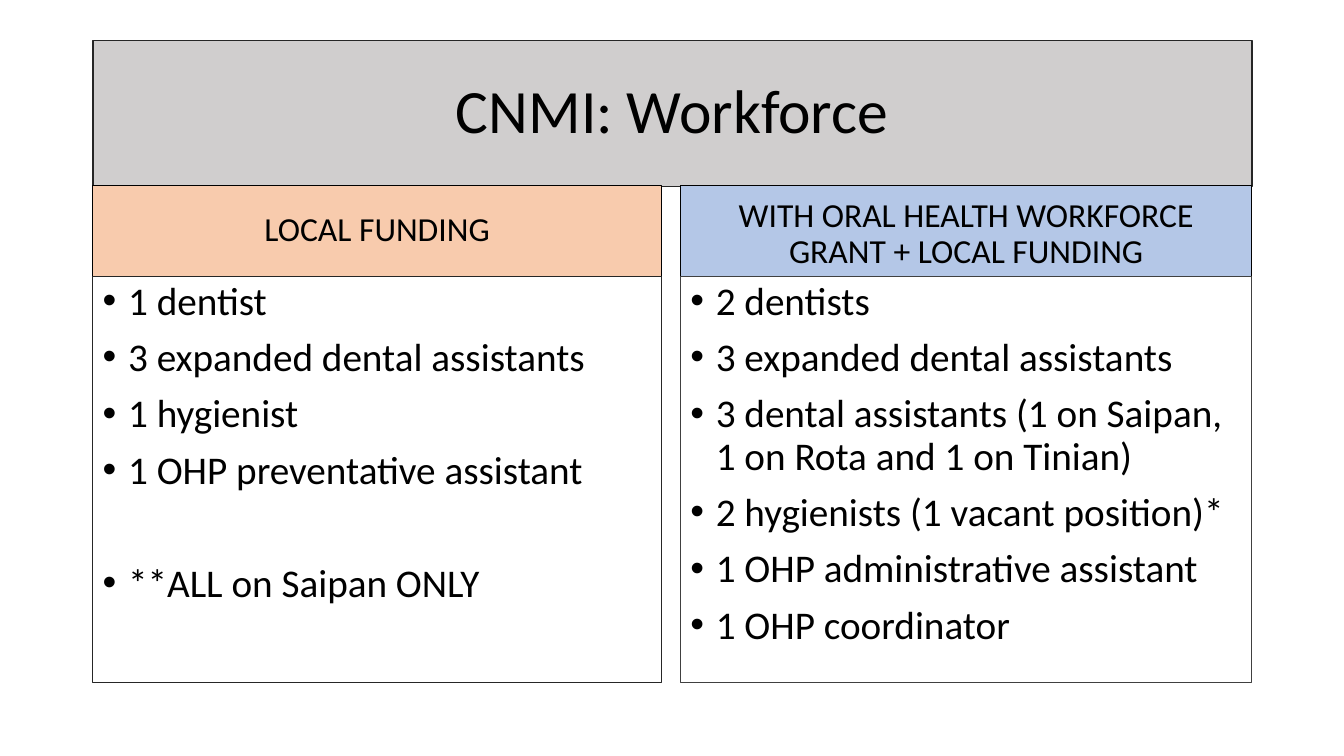
from dataclasses import dataclass

from lxml.etree import SubElement
from pptx import Presentation
from pptx.dml.color import RGBColor
from pptx.enum.shapes import MSO_SHAPE as Shape
from pptx.enum.text import MSO_ANCHOR as Anchor, PP_ALIGN as Align
from pptx.oxml.ns import qn
from pptx.util import Cm, Pt

# Content
TITLE = "CNMI: Workforce"
FUNDING_COLUMNS = [
    {
        "heading": "LOCAL FUNDING",
        "anchor": Anchor.MIDDLE,
        "fill": "F8CBAD",
        "border": "262626",
        "staff": ["1 dentist", "3 expanded dental assistants", "1 hygienist",
                  "1 OHP preventative assistant"],
        "footnote": "**ALL on Saipan ONLY",
    },
    {
        "heading": "WITH ORAL HEALTH WORKFORCE GRANT + LOCAL FUNDING",
        "anchor": Anchor.BOTTOM,
        "fill": "B4C7E7",
        "border": "404040",
        "staff": ["2 dentists", "3 expanded dental assistants",
                  "3 dental assistants (1 on Saipan, 1 on Rota and 1 on Tinian)",
                  "2 hygienists (1 vacant position)*",
                  "1 OHP administrative assistant", "1 OHP coordinator"],
        "footnote": None,
    },
]


@dataclass(frozen=True)
class Theme:
    font: str = "Calibri"
    text: str = "000000"
    title_fill: str = "D0CECE"
    title_border: str = "262626"
    heading_border: str = "000000"
    title_size: int = 44
    heading_size: int = 24
    staff_size: int = 28
    line_spacing: float = 0.9
    space_before: int = 10
    footnote_space: float = 50.5


THEME = Theme()

# Layout in centimetres
SLIDE_WIDTH, SLIDE_HEIGHT = 33.87, 19.05
LEFT, WIDTH = 2.34, 29.21
TITLE_TOP, TITLE_HEIGHT = 1.02, 3.68
HEADING_TOP, HEADING_HEIGHT = 4.68, 2.28
STAFF_TOP, STAFF_HEIGHT = HEADING_TOP + HEADING_HEIGHT, 10.24
LOCAL_WIDTH, GUTTER = 14.33, 0.48
GRANT_LEFT = LEFT + LOCAL_WIDTH + GUTTER
COLUMN_SPANS = [(LEFT, LOCAL_WIDTH), (GRANT_LEFT, LEFT + WIDTH - GRANT_LEFT)]
BULLET_INDENT = Cm(0.64)


def add_panel(slide, box, lines, size, fill, border, border_width=0.75,
              anchor=Anchor.MIDDLE, align=Align.CENTER):
    panel = slide.shapes.add_shape(Shape.RECTANGLE, *(Cm(side) for side in box))
    panel.shadow.inherit = False
    if fill:
        panel.fill.solid()
        panel.fill.fore_color.rgb = RGBColor.from_string(fill)
    else:
        panel.fill.background()
    panel.line.color.rgb = RGBColor.from_string(border)
    panel.line.width = Pt(border_width)

    frame = panel.text_frame
    frame.word_wrap = True
    frame.vertical_anchor = anchor
    frame.text = "\n".join(lines)
    for paragraph in frame.paragraphs:
        paragraph.alignment = align
        paragraph.line_spacing = THEME.line_spacing
        paragraph.space_before = Pt(THEME.space_before)
        for run in paragraph.runs:
            run.font.name = THEME.font
            run.font.size = Pt(size)
            run.font.color.rgb = RGBColor.from_string(THEME.text)
    return frame


def add_bullet(paragraph):
    properties = paragraph._p.get_or_add_pPr()
    properties.set("marL", str(BULLET_INDENT))
    properties.set("indent", str(-BULLET_INDENT))
    SubElement(properties, qn("a:buFont"), typeface="Arial")
    SubElement(properties, qn("a:buChar"), char="•")


def main():
    deck = Presentation()
    deck.slide_width, deck.slide_height = Cm(SLIDE_WIDTH), Cm(SLIDE_HEIGHT)
    slide = deck.slides.add_slide(deck.slide_layouts[6])

    # Title band
    title = add_panel(slide, (LEFT, TITLE_TOP, WIDTH, TITLE_HEIGHT), [TITLE],
                      THEME.title_size, THEME.title_fill, THEME.title_border, 1)
    title.paragraphs[0].space_before = Pt(0)

    for column, (left, width) in zip(FUNDING_COLUMNS, COLUMN_SPANS):
        # Funding heading
        add_panel(slide, (left, HEADING_TOP, width, HEADING_HEIGHT),
                  [column["heading"]], THEME.heading_size, column["fill"],
                  THEME.heading_border, anchor=column["anchor"])

        # Staff list, with the footnote set apart
        footnote = column["footnote"]
        lines = column["staff"] + ([footnote] if footnote else [])
        staff = add_panel(slide, (left, STAFF_TOP, width, STAFF_HEIGHT), lines,
                          THEME.staff_size, None, column["border"],
                          anchor=Anchor.TOP, align=Align.LEFT)
        for paragraph in staff.paragraphs:
            add_bullet(paragraph)
        if footnote:
            staff.paragraphs[-1].space_before = Pt(THEME.footnote_space)

    deck.save("out.pptx")


if __name__ == "__main__":
    main()
